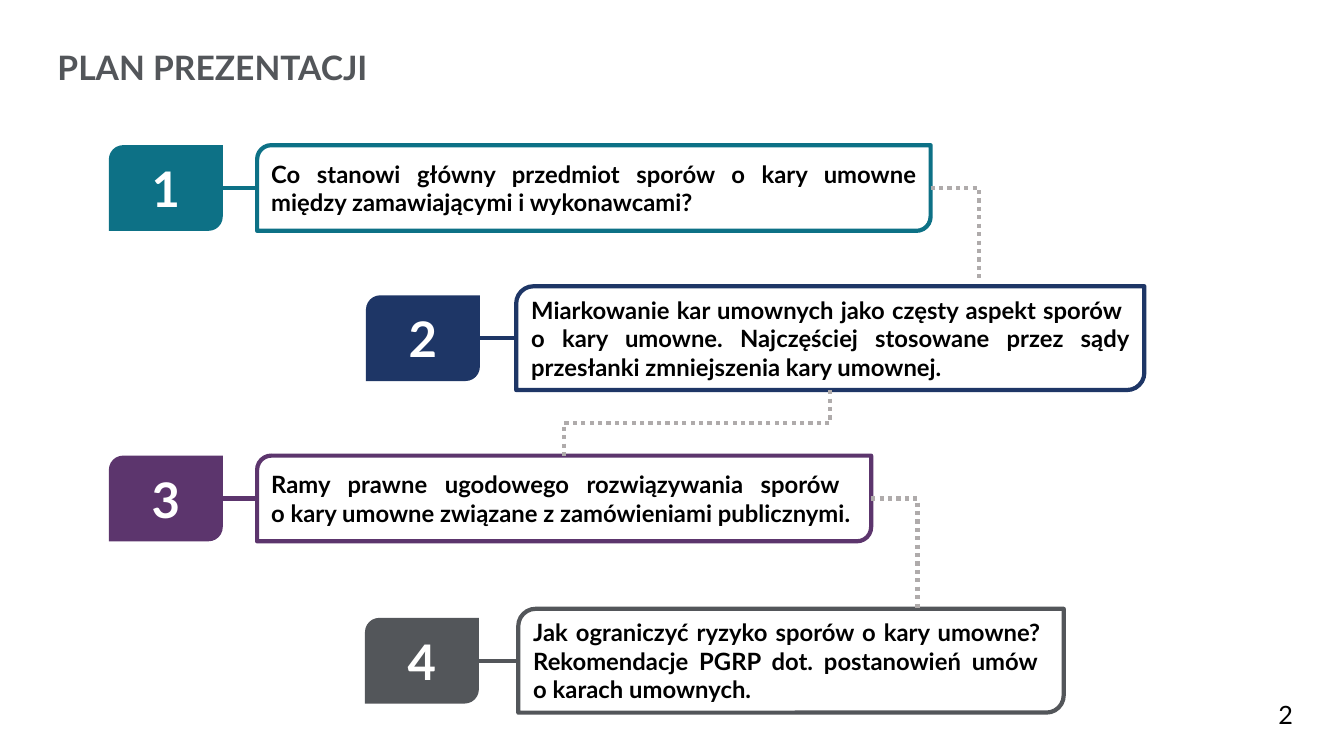
from lxml.etree import SubElement
from pptx import Presentation
from pptx.dml.color import RGBColor
from pptx.enum.dml import MSO_LINE
from pptx.enum.shapes import MSO_CONNECTOR, MSO_SHAPE
from pptx.enum.text import MSO_ANCHOR, MSO_AUTO_SIZE, PP_ALIGN
from pptx.oxml.ns import qn
from pptx.util import Inches, Pt

HEADING = "PLAN PREZENTACJI"
PAGE_NUMBER = "2"
TOPICS = [
    ("Co stanowi główny przedmiot sporów o kary umowne "
     "między zamawiającymi i wykonawcami?",
     "0D7186", 1.08, (2.55, 1.44, 6.68, 0.85)),
    ("Miarkowanie kar umownych jako częsty aspekt sporów \v"
     "o kary umowne. Najczęściej stosowane przez sądy "
     "przesłanki zmniejszenia kary umownej.",
     "1E3666", 3.63, (5.12, 2.84, 6.23, 1.03)),
    ("Ramy prawne ugodowego rozwiązywania sporów \v"
     "o kary umowne związane z zamówieniami publicznymi.",
     "5C356D", 1.08, (2.55, 4.52, 6.09, 0.85)),
    ("Jak ograniczyć ryzyko sporów o kary umowne? \v"
     "Rekomendacje PGRP dot. postanowień umów \v"
     "o karach umownych.",
     "53565A", 3.62, (5.14, 6.04, 5.41, 1.03)),
]
BADGE_WIDTH, BADGE_HEIGHT = 1.13, 0.85
GRAY, DOTS = "53565A", "AFABAB"


def color(value):
    return RGBColor.from_string(value)


def write(shape, text, size=17, ink="000000", bold=True, align=PP_ALIGN.LEFT,
          anchor=MSO_ANCHOR.MIDDLE, margin=None, after=0):
    frame = shape.text_frame
    frame.word_wrap = True
    frame.auto_size = MSO_AUTO_SIZE.NONE
    frame.vertical_anchor = anchor
    if margin is not None:
        frame.margin_left = frame.margin_right = Inches(margin)
        frame.margin_top = frame.margin_bottom = Inches(margin)
    frame.text = text
    paragraph = frame.paragraphs[0]
    paragraph.alignment = align
    paragraph.space_after = Pt(after)
    for run in paragraph.runs:
        run.font.name = "Lato"
        run.font.size = Pt(size)
        run.font.bold = bold
        run.font.color.rgb = color(ink)


def add_box(box):
    shape = slide.shapes.add_shape(MSO_SHAPE.ROUND_2_DIAG_RECTANGLE, *map(Inches, box))
    shape.shadow.inherit = False
    return shape


def add_link(kind, ends, ink):
    link = slide.shapes.add_connector(kind, *map(Inches, ends))
    link.line.color.rgb = color(ink)
    link.line.width = Pt(3)
    SubElement(link._element.spPr, qn("a:effectLst"))
    return link


def add_corner(start_x, start_y, end_x, end_y):
    corner = add_link(MSO_CONNECTOR.ELBOW, (start_x, start_y, end_x, end_y), DOTS)
    corner.line.dash_style = MSO_LINE.ROUND_DOT
    corner._element.spPr.find(qn("a:prstGeom")).set("prst", "bentConnector2")


def add_step_down(start_x, start_y, end_x, end_y):
    center_x, center_y = (start_x + end_x) / 2, (start_y + end_y) / 2
    half_drop, half_shift = (end_y - start_y) / 2, (start_x - end_x) / 2
    step = add_link(MSO_CONNECTOR.ELBOW,
                    (center_x - half_drop, center_y - half_shift,
                     center_x + half_drop, center_y + half_shift), DOTS)
    step.line.dash_style = MSO_LINE.ROUND_DOT
    step._element.spPr.find(qn("a:xfrm")).set("rot", str(90 * 60000))


deck = Presentation()
deck.slide_width, deck.slide_height = Inches(13.33), Inches(7.5)
slide = deck.slides.add_slide(deck.slide_layouts[5])

title = slide.shapes.title
title.left, title.top = Inches(0.57), Inches(0.47)
title.width, title.height = Inches(8.93), Inches(0.4)
write(title, HEADING, size=24, ink=GRAY, anchor=MSO_ANCHOR.TOP, margin=0)

page = slide.shapes.add_textbox(Inches(12.58), Inches(6.89), Inches(0.44), Inches(0.36))
write(page, PAGE_NUMBER, size=18, bold=False, anchor=MSO_ANCHOR.TOP)

for number, (topic, accent, badge_left, card_box) in enumerate(TOPICS, 1):
    left, top, width, height = card_box
    card = add_box(card_box)
    card.fill.background()
    card.line.color.rgb = color(accent)
    card.line.width = Pt(3)
    write(card, topic, align=PP_ALIGN.JUSTIFY, after=18)

    badge_top = top + (height - BADGE_HEIGHT) / 2
    badge = add_box((badge_left, badge_top, BADGE_WIDTH, BADGE_HEIGHT))
    badge.fill.solid()
    badge.fill.fore_color.rgb = color(accent)
    badge.line.fill.background()
    write(badge, str(number), size=35, ink="FFFFFF", align=PP_ALIGN.CENTER)

    middle = top + height / 2
    link = add_link(MSO_CONNECTOR.STRAIGHT,
                    (badge_left + BADGE_WIDTH, middle, left, middle), accent)
    link.begin_connect(badge, 3)
    link.end_connect(card, 1)

first, second, third, fourth = [box for *_, box in TOPICS]
add_corner(first[0] + first[2], first[1] + first[3] / 2, 9.71, 2.79)
add_step_down(second[0] + second[2] / 2, second[1] + second[3],
              third[0] + third[2] / 2, third[1])
add_corner(third[0] + third[2], third[1] + third[3] / 2, 9.1, fourth[1])

deck.save("out.pptx")
